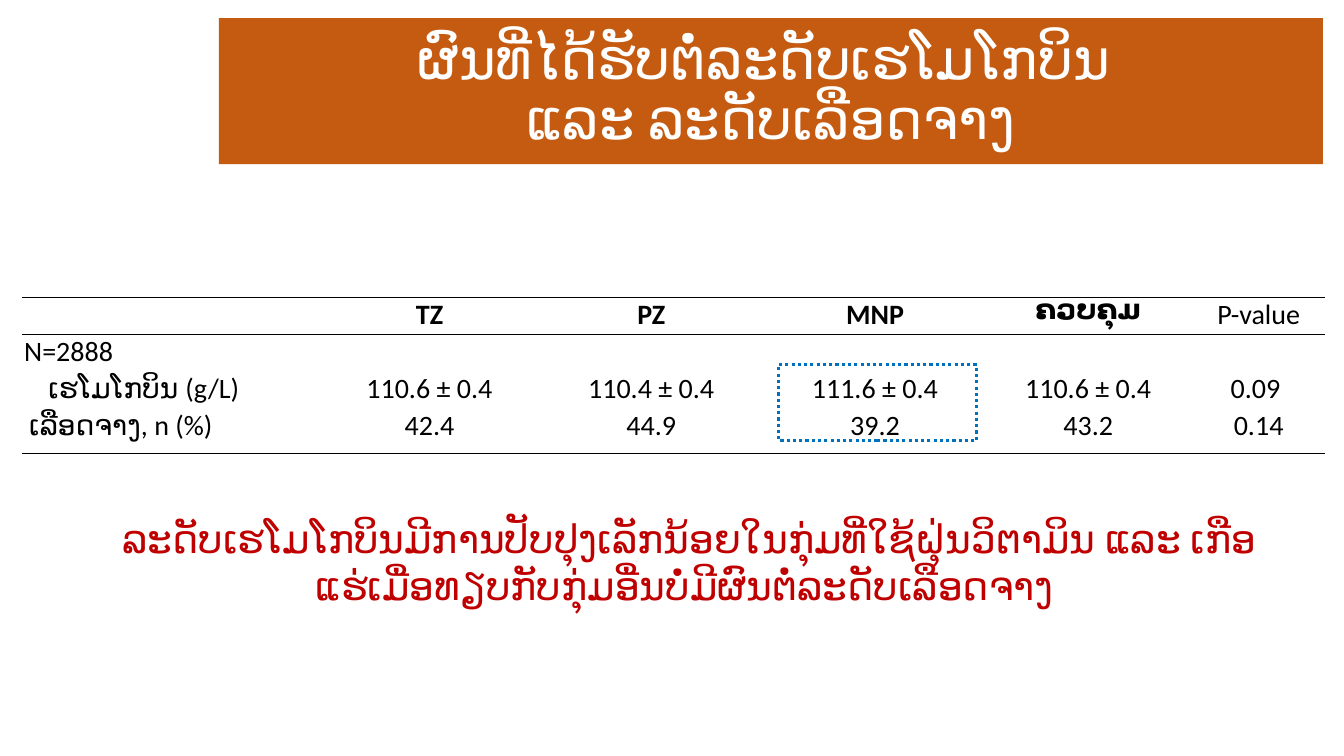
from dataclasses import dataclass

from lxml.etree import SubElement
from pptx import Presentation
from pptx.dml.color import RGBColor
from pptx.enum.dml import MSO_LINE
from pptx.enum.shapes import MSO_SHAPE as Preset
from pptx.enum.text import MSO_ANCHOR as Anchor, PP_ALIGN as Align
from pptx.oxml.ns import qn
from pptx.slide import Slide
from pptx.table import _Cell as Cell
from pptx.text.text import TextFrame
from pptx.util import Inches, Pt

WHITE = RGBColor(0xFF, 0xFF, 0xFF)
BLACK = RGBColor(0x00, 0x00, 0x00)
ORANGE = RGBColor(0xC5, 0x5A, 0x11)
RED = RGBColor(0xC0, 0x00, 0x00)
BLUE = RGBColor(0x00, 0x70, 0xC0)

SLIDE_WIDTH, SLIDE_HEIGHT = Inches(13.33), Inches(7.5)


def across(percent: float) -> int:
    return round(SLIDE_WIDTH * percent / 100)


def down(percent: float) -> int:
    return round(SLIDE_HEIGHT * percent / 100)


@dataclass(frozen=True)
class Area:
    """Place on the slide, in percent of its width and height."""
    left: float
    top: float
    width: float
    height: float

    def box(self) -> tuple[int, int, int, int]:
        return across(self.left), down(self.top), across(self.width), down(self.height)


@dataclass(frozen=True)
class Result:
    """One row of the table, with its height and cell margins."""
    texts: tuple[str, ...]
    height: float = 4.93
    margin: float = 0.02
    indent: float = 0
    bold_columns: tuple[int, ...] = ()
    ruled_sides: tuple[str, ...] = ()


TITLE_AREA = Area(16.28, 2.4, 82.15, 19.33)
TABLE_AREA = Area(1.65, 39.33, 96.92, 20.66)
CONCLUSION_AREA = Area(6.3, 67.33, 89.27, 13.87)
HIGHLIGHT_AREA = Area(57.91, 48.27, 14.78, 10)
COLUMN_WIDTHS = (22.36, 15.9, 17.1, 16.2, 15.53, 9.83)

TITLE = "ຜົນທີ່ໄດ້ຮັບຕໍ່ລະດັບເຮໂມໂກບິນ \vແລະ ລະດັບເລືອດຈາງ"
CONCLUSION = (" ລະດັບເຮໂມໂກບິນມີການປັບປຸງເລັກນ້ອຍໃນກຸ່ມທີ່ໃຊ້ຝຸ່ນວິຕາມິນ ແລະ "
              "ເກືອແຮ່ເມື່ອທຽບກັບກຸ່ມອື່ນບໍ່ມີຜົນຕໍ່ລະດັບເລືອດຈາງ")
RESULTS = (
    Result(("", "TZ", "PZ", "MNP", "ຄວບຄຸມ", "P-value"),
           bold_columns=(1, 2, 3, 4), ruled_sides=("lnT", "lnB")),
    Result(("N=2888", "", "", "", "", ""), ruled_sides=("lnT",)),
    Result(("ເຮໂມໂກບິນ (g/L)", "110.6 ± 0.4", "110.4 ± 0.4", "111.6 ± 0.4",
            "110.6 ± 0.4", "0.09 "), margin=0.07, indent=0.19),
    Result(("ເລືອດຈາງ, n (%)", "42.4", "44.9", "39.2", "43.2", "0.14"),
           height=5.87, margin=0.07, ruled_sides=("lnB",)),
)

TITLE_FONT = {"name": "Lato", "size": Pt(40), "bold": False}
CONCLUSION_FONT = {"name": "Lato", "size": Pt(28)}
CELL_FONT = {"name": "Calibri", "size": Pt(20)}


def write(frame: TextFrame, text: str, look: dict, color: RGBColor,
          align: Align = Align.CENTER) -> None:
    frame.text = text
    paragraph = frame.paragraphs[0]
    paragraph.alignment = align
    for attribute, value in look.items():
        setattr(paragraph.font, attribute, value)
    paragraph.font.color.rgb = color
    for run in paragraph.runs:
        for attribute, value in look.items():
            setattr(run.font, attribute, value)
        run.font.color.rgb = color


def rule_cell(cell: Cell, ruled_sides: tuple[str, ...]) -> None:
    properties = cell._tc.get_or_add_tcPr()
    for side in ("lnL", "lnR", "lnT", "lnB"):
        border = SubElement(properties, qn(f"a:{side}"), w=str(Pt(1)))
        if side in ruled_sides:
            ink = SubElement(border, qn("a:solidFill"))
            SubElement(ink, qn("a:srgbClr"), val=str(BLACK))
        else:
            SubElement(border, qn("a:noFill"))


def add_title(slide: Slide) -> None:
    title = slide.shapes.title
    title.left, title.top, title.width, title.height = TITLE_AREA.box()
    title.fill.solid()
    title.fill.fore_color.rgb = ORANGE
    title.text_frame.vertical_anchor = Anchor.MIDDLE
    write(title.text_frame, TITLE, TITLE_FONT, WHITE)
    title.text_frame.paragraphs[0].line_spacing = 0.9


def add_results(slide: Slide) -> None:
    table = slide.shapes.add_table(
        len(RESULTS), len(COLUMN_WIDTHS), *TABLE_AREA.box()).table
    table.first_row = table.horz_banding = False
    for column, width in zip(table.columns, COLUMN_WIDTHS):
        column.width = across(width)
    for row, result in zip(table.rows, RESULTS):
        row.height = down(result.height)
        for index, (cell, text) in enumerate(zip(row.cells, result.texts)):
            rule_cell(cell, result.ruled_sides)
            cell.fill.solid()
            cell.fill.fore_color.rgb = WHITE
            indent = 0 if index else result.indent
            margins = {"margin_left": Inches(result.margin + indent),
                       "margin_right": Inches(result.margin),
                       "margin_top": 0, "margin_bottom": 0}
            for attribute, value in margins.items():
                setattr(cell, attribute, value)
            look = CELL_FONT | {"bold": index in result.bold_columns}
            write(cell.text_frame, text, look, BLACK,
                  Align.CENTER if index else Align.LEFT)


def add_conclusion(slide: Slide) -> None:
    conclusion = slide.shapes.add_textbox(*CONCLUSION_AREA.box()).text_frame
    conclusion.word_wrap = True
    write(conclusion, CONCLUSION, CONCLUSION_FONT, RED)


def add_highlight(slide: Slide) -> None:
    highlight = slide.shapes.add_shape(Preset.RECTANGLE, *HIGHLIGHT_AREA.box())
    highlight.shadow.inherit = False
    highlight.fill.background()
    highlight.line.color.rgb = BLUE
    highlight.line.width = Pt(2.25)
    highlight.line.dash_style = MSO_LINE.ROUND_DOT


def main() -> None:
    deck = Presentation()
    deck.slide_width, deck.slide_height = SLIDE_WIDTH, SLIDE_HEIGHT
    slide = deck.slides.add_slide(deck.slide_layouts[5])
    # Heading, study results, then the finding and the marked group
    add_title(slide)
    add_results(slide)
    add_conclusion(slide)
    add_highlight(slide)
    deck.save("out.pptx")


if __name__ == "__main__":
    main()
